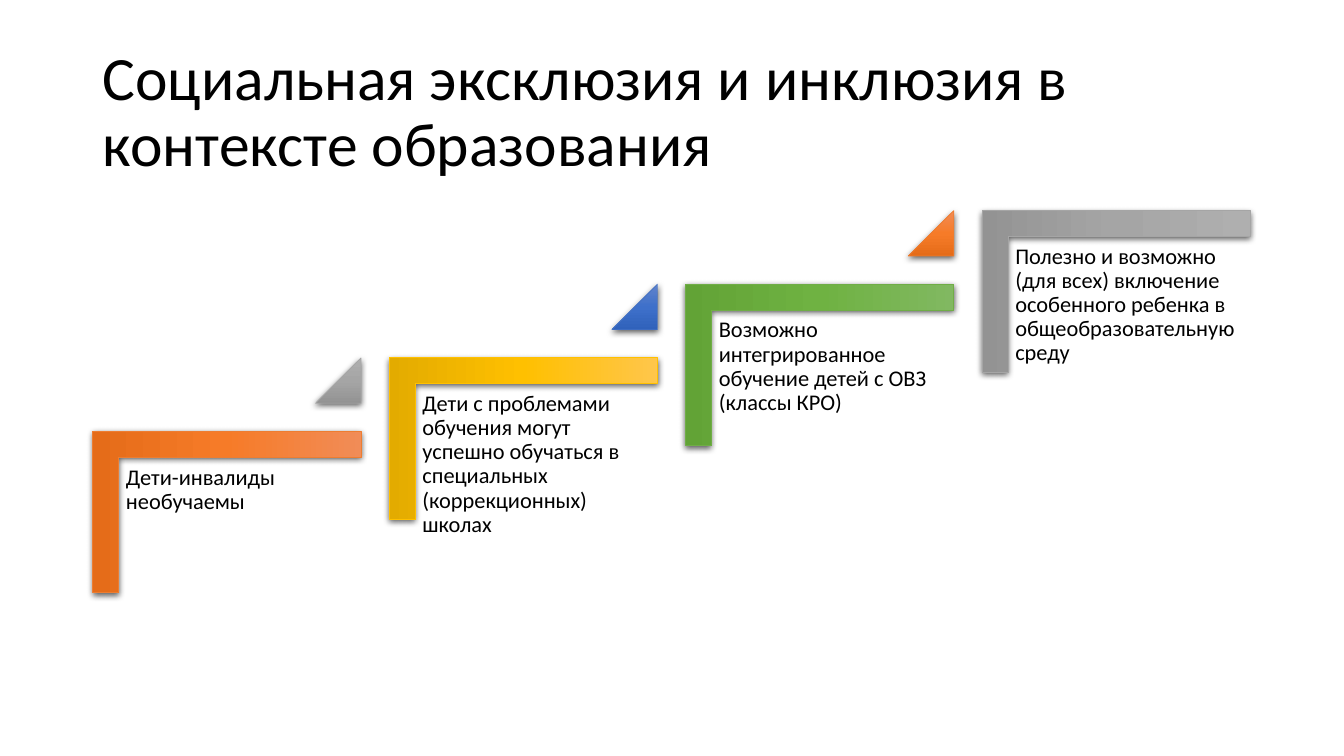
import copy

import pptx
import pptx.util
import pptx.dml.color
import pptx.enum.shapes
import pptx.enum.text
import pptx.oxml
import pptx.oxml.ns

Inches = pptx.util.Inches
Pt = pptx.util.Pt
RGB = pptx.dml.color.RGBColor
SHAPE = pptx.enum.shapes.MSO_SHAPE
ANCHOR = pptx.enum.text.MSO_ANCHOR
qn = pptx.oxml.ns.qn

BLACK = RGB(0x00, 0x00, 0x00)
# each hue: line colour, then gradient from top to bottom
ORANGE = [RGB(0xED, 0x7D, 0x31), RGB(0xF1, 0x8C, 0x57),
          RGB(0xF6, 0x7B, 0x28), RGB(0xE5, 0x6C, 0x19)]
GRAY = [RGB(0xA5, 0xA5, 0xA5), RGB(0xAF, 0xAF, 0xAF),
        RGB(0xA5, 0xA5, 0xA5), RGB(0x93, 0x93, 0x93)]
GOLD = [RGB(0xFF, 0xC0, 0x00), RGB(0xFF, 0xC6, 0x4B),
        RGB(0xFF, 0xC0, 0x00), RGB(0xE3, 0xAB, 0x00)]
BLUE = [RGB(0x44, 0x72, 0xC4), RGB(0x61, 0x83, 0xCB),
        RGB(0x3E, 0x70, 0xCA), RGB(0x30, 0x62, 0xBB)]
GREEN = [RGB(0x70, 0xAD, 0x47), RGB(0x81, 0xB8, 0x61),
         RGB(0x6F, 0xB2, 0x42), RGB(0x62, 0xA3, 0x36)]

SHADOW = (
    f'<a:outerShdw {pptx.oxml.ns.nsdecls("a")} blurRad="57150" dist="19050" '
    'dir="5400000" algn="ctr" rotWithShape="0"><a:srgbClr val="000000">'
    '<a:alpha val="63000"/></a:srgbClr></a:outerShdw>')

deck = pptx.Presentation()
deck.slide_width = Inches(13.33)
deck.slide_height = Inches(7.5)
slide = deck.slides.add_slide(deck.slide_layouts[6])


def add_text(words, box, size, pad, anchor):
    frame = slide.shapes.add_textbox(*map(Inches, box)).text_frame
    look = {"word_wrap": True, "vertical_anchor": anchor,
            "margin_left": Inches(pad), "margin_right": Inches(pad),
            "margin_top": Inches(0.07), "margin_bottom": Inches(0.07)}
    for key, value in look.items():
        setattr(frame, key, value)
    para = frame.paragraphs[0]
    para.line_spacing = 0.9
    run = para.add_run()
    run.text = words
    for key, value in {"name": "Calibri", "size": Pt(size)}.items():
        setattr(run.font, key, value)
    run.font.color.rgb = BLACK


def add_part(kind, box, hue, adjust, turn=0):
    """Add a shape with a three-stop gradient and a soft shadow below it."""
    part = slide.shapes.add_shape(kind, *map(Inches, box))
    part.rotation = turn
    for n, value in enumerate(adjust):
        part.adjustments[n] = value
    part.fill.gradient()
    part.fill.gradient_angle = 270
    props = part._element.spPr
    stops = props.find(qn("a:gradFill")).find(qn("a:gsLst"))
    stops.insert(1, copy.deepcopy(stops[0]))
    for n, stop in enumerate(part.fill.gradient_stops):
        stop.position = n / 2
        stop.color.rgb = hue[n + 1]
    part.line.color.rgb = hue[0]
    part.line.width = Pt(0.5)
    part.shadow.inherit = False
    props.find(qn("a:effectLst")).append(pptx.oxml.parse_xml(SHADOW))


add_text("Социальная эксклюзия и инклюзия в контексте образования",
         (0.92, 0.4, 11.5, 1.45), 44, 0.1, ANCHOR.MIDDLE)

steps = [
    ("Дети-инвалиды необучаемы", ORANGE, GRAY),
    ("Дети с проблемами обучения могут успешно обучаться в специальных "
     "(коррекционных) школах", GOLD, BLUE),
    ("Возможно интегрированное обучение детей с ОВЗ (классы КРО)",
     GREEN, ORANGE),
    ("Полезно и возможно (для всех) включение особенного ребенка в "
     "общеобразовательную среду", GRAY, None),
]
for i, (words, hue, mark) in enumerate(steps):
    left = 1.18 + 2.94 * i
    top = 4.55 - 0.73 * i
    add_part(SHAPE.CORNER, (left + 0.27, top - 0.8, 1.6, 2.66), hue,
             (0.161, 0.161), 90)
    add_text(words, (left, top, 2.4, 2.11), 16, 0.07, ANCHOR.TOP)
    if mark:
        add_part(SHAPE.ISOSCELES_TRIANGLE,
                 (left + 1.95, top - 1, 0.45, 0.45), mark, (1,))

deck.save("out.pptx")
